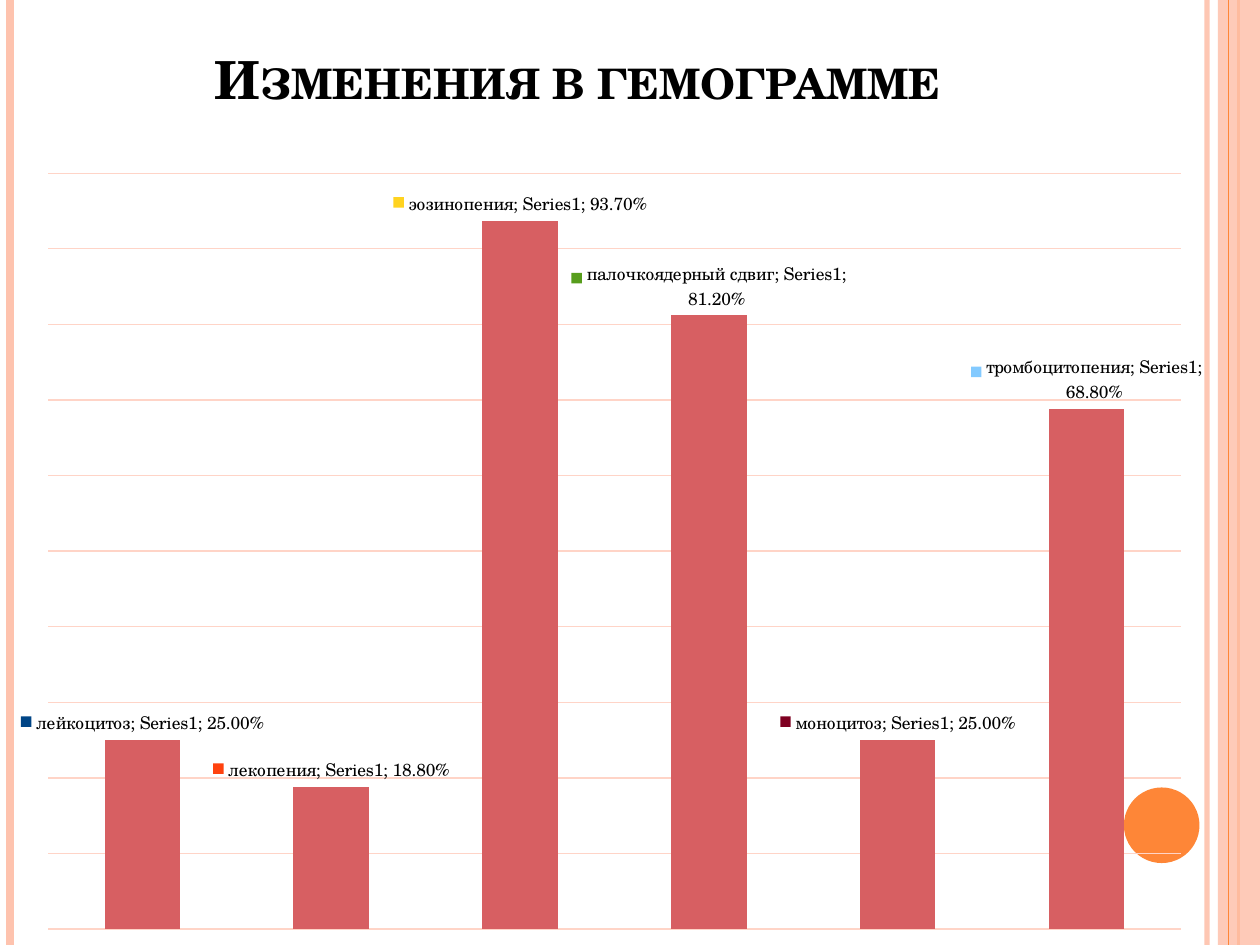
from dataclasses import dataclass
from typing import Optional

from lxml import etree
from pptx import Presentation
from pptx.chart.data import CategoryChartData
from pptx.dml.color import RGBColor
from pptx.enum.chart import XL_CHART_TYPE, XL_LABEL_POSITION
from pptx.enum.shapes import MSO_CONNECTOR, MSO_SHAPE
from pptx.enum.text import MSO_ANCHOR, PP_ALIGN
from pptx.oxml import parse_xml
from pptx.oxml.ns import nsdecls, qn
from pptx.util import Pt

COLUMN = XL_CHART_TYPE.COLUMN_CLUSTERED
OUTSIDE_END = XL_LABEL_POSITION.OUTSIDE_END
STRAIGHT = MSO_CONNECTOR.STRAIGHT
RECTANGLE, OVAL = MSO_SHAPE.RECTANGLE, MSO_SHAPE.OVAL
BOTTOM, CENTER = MSO_ANCHOR.BOTTOM, PP_ALIGN.CENTER
WIDTH, HEIGHT = 720, 540
TITLE_ONLY = 5


@dataclass(frozen=True)
class Theme:
    font: str = "TeX Gyre Schola"
    title_size: float = 30
    label_size: float = 10
    text: str = "000000"
    peach: str = "FEC3AE"
    orange: str = "FE8637"
    column: str = "D75F62"
    grid: str = "FFD4C7"


@dataclass(frozen=True)
class Stripe:
    x: float
    weight: float
    color: str
    opacity: Optional[int] = None


@dataclass(frozen=True)
class Block:
    kind: MSO_SHAPE
    left: float
    top: float
    width: float
    height: float
    color: str
    opacity: Optional[int] = None


@dataclass(frozen=True)
class Finding:
    name: str
    share: float


THEME = Theme()
STRIPES_BELOW = [
    Stripe(689.76, 3, THEME.peach, 93),
    Stripe(5.76, 4.5, THEME.peach),
    Stripe(707.76, 1.5, THEME.orange),
]
BAND = Block(RECTANGLE, 696, 0, 24, HEIGHT, THEME.peach, 87)
STRIPE_ABOVE = Stripe(702, 0.75, THEME.orange)
DISC = Block(OVAL, 642.24, 450, 43.2, 43.2, THEME.orange)
FINDINGS = [
    Finding("лейкоцитоз", 0.25),
    Finding("лекопения", 0.188),
    Finding("эозинопения", 0.937),
    Finding("палочкоядерный сдвиг", 0.812),
    Finding("моноцитоз", 0.25),
    Finding("тромбоцитопения", 0.688),
]


def rgb(color: str) -> RGBColor:
    return RGBColor.from_string(color)


def set_opacity(sp, opacity: Optional[int]) -> None:
    if opacity is not None:
        clr = next(sp._element.spPr.iter(qn("a:srgbClr")))
        etree.SubElement(clr, qn("a:alpha")).set("val", str(opacity * 1000))


def add_stripe(s, stripe: Stripe) -> None:
    x = Pt(stripe.x)
    sp = s.shapes.add_connector(STRAIGHT, x, Pt(0), x, Pt(HEIGHT))
    sp.line.color.rgb = rgb(stripe.color)
    sp.line.width = Pt(stripe.weight)
    set_opacity(sp, stripe.opacity)
    etree.SubElement(sp._element.spPr, qn("a:effectLst"))


def add_block(s, block: Block) -> None:
    sp = s.shapes.add_shape(block.kind, Pt(block.left), Pt(block.top),
                            Pt(block.width), Pt(block.height))
    sp.shadow.inherit = False
    sp.fill.solid()
    sp.fill.fore_color.rgb = rgb(block.color)
    sp.line.fill.background()
    set_opacity(sp, block.opacity)


def set_title(s, text: str) -> None:
    sp = s.shapes.title
    sp.left, sp.top, sp.width, sp.height = Pt(36), Pt(21.6), Pt(588), Pt(44.64)
    tf = sp.text_frame
    tf.vertical_anchor = BOTTOM
    p = tf.paragraphs[0]
    p.alignment = CENTER
    r = p.add_run()
    r.text = text
    r.font.name = THEME.font
    r.font.size = Pt(THEME.title_size)
    r.font.bold = True
    r.font.color.rgb = rgb(THEME.text)
    r._r.get_or_add_rPr().set("cap", "small")


def clear_fill() -> etree._Element:
    return parse_xml(f'<c:spPr {nsdecls("c", "a")}><a:noFill/>'
                     '<a:ln><a:noFill/></a:ln></c:spPr>')


def set_plot_area(chart, x: float, y: float, w: float, h: float) -> None:
    area = chart.element.find(f'{qn("c:chart")}/{qn("c:plotArea")}')
    for old in area.findall(qn("c:layout")):
        area.remove(old)
    layout = etree.Element(qn("c:layout"))
    manual = etree.SubElement(layout, qn("c:manualLayout"))
    settings = {"layoutTarget": "inner", "xMode": "edge", "yMode": "edge",
                "x": x, "y": y, "w": w, "h": h}
    for tag, value in settings.items():
        etree.SubElement(manual, qn(f"c:{tag}")).set("val", str(value))
    area.insert(0, layout)
    area.append(clear_fill())
    chart.element.find(qn("c:chart")).addnext(clear_fill())


def format_labels(labels) -> None:
    labels.show_value = True
    labels.show_category_name = True
    labels.show_series_name = True
    labels.show_legend_key = True
    labels.number_format = "0.00%"
    labels.number_format_is_linked = False
    labels.position = OUTSIDE_END
    labels.font.name = THEME.font
    labels.font.size = Pt(THEME.label_size)
    labels.font.color.rgb = rgb(THEME.text)
    separator = etree.Element(qn("c:separator"))
    separator.text = "; "
    labels._element.find(qn("c:showBubbleSize")).addnext(separator)


def add_findings_chart(s, findings: list[Finding]) -> None:
    data = CategoryChartData(number_format="0.00%")
    data.categories = [f.name for f in findings]
    data.add_series("Series1", [f.share for f in findings])
    chart = s.shapes.add_chart(COLUMN, Pt(12), Pt(90), Pt(678), Pt(450), data).chart
    chart.has_legend = False
    chart.has_title = False
    chart.font.name = THEME.font
    chart.font.size = Pt(THEME.label_size)
    chart.font.color.rgb = rgb(THEME.text)
    plot = chart.plots[0]
    plot.gap_width = 150
    plot.vary_by_categories = True
    series = plot.series[0]
    series.format.fill.solid()
    series.format.fill.fore_color.rgb = rgb(THEME.column)
    format_labels(series.data_labels)
    chart.category_axis.visible = False
    axis = chart.value_axis
    axis.visible = False
    axis.minimum_scale, axis.maximum_scale, axis.major_unit = 0, 1, 0.1
    axis.has_major_gridlines = True
    axis.major_gridlines.format.line.color.rgb = rgb(THEME.grid)
    axis.major_gridlines.format.line.width = Pt(0.75)
    set_plot_area(chart, 0.02, 0.02, 0.96, 0.96)


def main() -> None:
    prs = Presentation()
    prs.slide_width, prs.slide_height = Pt(WIDTH), Pt(HEIGHT)
    s = prs.slides.add_slide(prs.slide_layouts[TITLE_ONLY])
    for stripe in STRIPES_BELOW:
        add_stripe(s, stripe)
    add_block(s, BAND)
    add_stripe(s, STRIPE_ABOVE)
    add_block(s, DISC)
    set_title(s, "Изменения в гемограмме")
    add_findings_chart(s, FINDINGS)
    prs.save("out.pptx")


if __name__ == "__main__":
    main()
